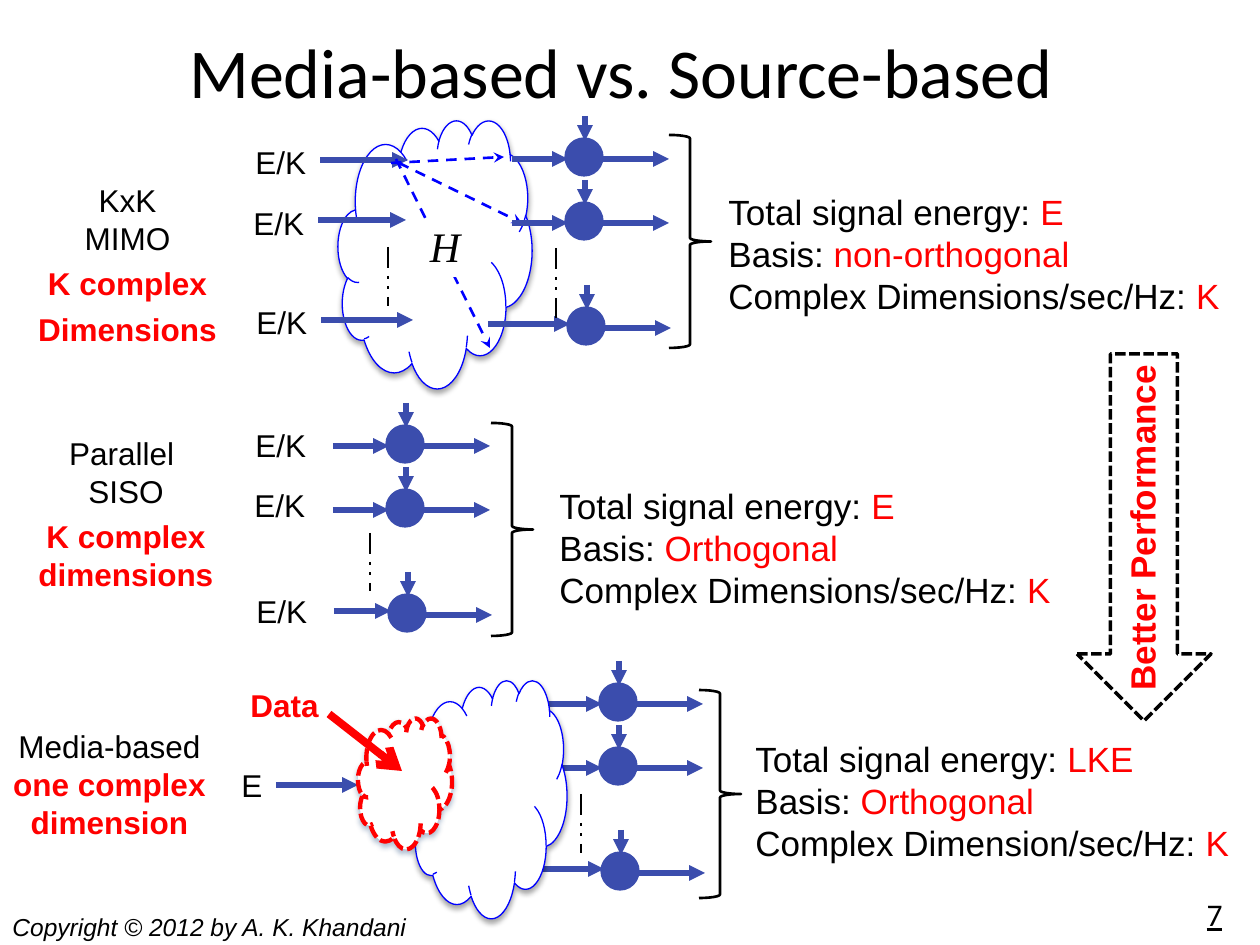
from lxml import etree
from pptx import Presentation
from pptx import util as u
from pptx.dml.color import RGBColor
from pptx.enum import dml, shapes, text
from pptx.oxml.ns import qn

SCALE = 914400 / 126  # EMU per px
COLORS = {"black": "000000", "white": "FFFFFF", "red": "FF0000",
          "blue": "0000FF", "indigo": "3B4DAD", "navy": "1F497D"}
CENTER, RIGHT = text.PP_ALIGN.CENTER, text.PP_ALIGN.RIGHT
MIDDLE = text.MSO_ANCHOR.MIDDLE
DASH = dml.MSO_LINE.DASH
SYS_DASH = dml.MSO_LINE.SQUARE_DOT
DASH_DOT_DOT = dml.MSO_LINE.DASH_DOT_DOT
SHAPE = shapes.MSO_SHAPE

# Scheme labels: box, wrap, lines of (text, is a highlight, line spacing)
schemes = [
    ((25, 175, 205, 219), False, [("KxK", False, 1), ("MIMO", False, 1),
                                  ("K complex", True, 1.2), ("Dimensions", True, 1.2)]),
    ((25, 428, 202, 173), False, [("Parallel ", False, 1), ("SISO", False, 1),
                                  ("K complex", True, 1.2), ("dimensions", True, 1)]),
    ((-74, 721, 367, 165), True, [("Media-based", False, 1), ("one complex", True, 1),
                                  ("dimension", True, 1)]),
]
# Properties: left, top, lines of (label, value)
properties = [
    (716, 184, [("Total signal energy: ", "E"), ("Basis: ", "non-orthogonal"),
                ("Complex Dimensions/sec/Hz: ", "K")]),
    (547, 478, [("Total signal energy: ", "E"), ("Basis: ", "Orthogonal"),
                ("Complex Dimensions/sec/Hz: ", "K")]),
    (743, 731, [("Total signal energy: ", "LKE"), ("Basis: ", "Orthogonal"),
                ("Complex Dimension/sec/Hz: ", "K")]),
]
braces = [(669, 135, 42, 213), (491, 423, 42, 213), (699, 690, 42, 208)]
# Receiver columns: left, top, input length of the last receiver
mimo_receivers, siso_receivers, media_receivers = (567, 140, 82), (388, 427, 57), (601, 685, 92)
receiver_steps = [(0, 0), (0, 64), (2, 169)]
energy_inputs = [(243, 137), (241, 198), (244, 297), (243, 420), (242, 480), (244, 586)]
mimo_inputs = [(316, 160), (314, 220), (321, 320)]
channel_paths = [(391, 163, 504, 157), (399, 163, 522, 223), (396, 159, 490, 348)]
ellipses = [(388, 247, 306), (556, 248, 318), (370, 533, 591), (581, 794, 853)]

prs = Presentation()
prs.slide_width, prs.slide_height = u.Inches(10), u.Inches(7.5)
slide = prs.slides.add_slide(prs.slide_layouts[6])


def px(*lengths):
    return [round(length * SCALE) for length in lengths]


def rgb(name):
    return RGBColor.from_string(COLORS[name])


def set_line(line, color, width, dash=None):
    line.color.rgb = rgb(color)
    line.width = u.Pt(width)
    if dash:
        line.dash_style = dash


def add_text(box, lines, size, font="Arial", align=None, anchor=None, wrap=False,
             italic=False, underline=False, fill=None, insets=None):
    """Each line is a list of (text, color, bold)."""
    label = slide.shapes.add_textbox(*px(*box))
    frame = label.text_frame
    frame.word_wrap = wrap
    if anchor is not None:
        frame.vertical_anchor = anchor
    if insets:
        (frame.margin_left, frame.margin_top,
         frame.margin_right, frame.margin_bottom) = px(*insets)
    if fill:
        label.fill.solid()
        label.fill.fore_color.rgb = rgb(fill)
    for i, parts in enumerate(lines):
        paragraph = frame.add_paragraph() if i else frame.paragraphs[0]
        paragraph.alignment = align
        for words, color, bold in parts:
            run = paragraph.add_run()
            run.text = words
            run.font.name, run.font.size = font, u.Pt(size)
            run.font.color.rgb = rgb(color)
            run.font.bold, run.font.italic = bold, italic
            run.font.underline = underline
    return label


def add_outline(kind, box, color, width, fill=None, dash=None, shadow=None):
    outline = slide.shapes.add_shape(kind, *px(*box))
    outline.shadow.inherit = False
    if fill:
        outline.fill.solid()
        outline.fill.fore_color.rgb = rgb(fill)
    else:
        outline.fill.background()
    set_line(outline.line, color, width, dash)
    if shadow:
        effects = outline._element.spPr.find(qn("a:effectLst"))
        outer = etree.SubElement(effects, qn("a:outerShdw"), blurRad="39370",
                                 dist="22860", dir="5400000", rotWithShape="0")
        tint = etree.SubElement(outer, qn("a:srgbClr"), val=COLORS[shadow])
        etree.SubElement(tint, qn("a:alpha"), val="35000")


def add_line(ends, color="indigo", width=3, head="triangle", dash=None):
    line = slide.shapes.add_connector(shapes.MSO_CONNECTOR.STRAIGHT, *px(*ends))
    set_line(line.line, color, width, dash)
    properties_xml = line._element.spPr
    if head:
        etree.SubElement(properties_xml.find(qn("a:ln")), qn("a:tailEnd"), type=head)
    etree.SubElement(properties_xml, qn("a:effectLst"))
    return line


def add_receivers(left, top, last_input):
    for i, (dx, dy) in enumerate(receiver_steps):
        x, y = left + dx, top + dy
        last = i == len(receiver_steps) - 1
        length, input_y = (last_input, y + 15) if last else (56, y + 19)
        add_outline(SHAPE.OVAL, (x, y, 34, 34), "indigo", 3, fill="indigo")
        add_line((x + 1 - length, input_y, x + 1, input_y))
        add_line((x + 34, y + 19, x + 102, y + 19))
        add_line((x + 18, y - 24, x + 18, y + 1))


# Title, footer and slide number
add_text((54, -9, 1134, 158), [[("Media-based vs. Source-based", "black", False)]], 40,
         font="Calibri", align=CENTER, anchor=MIDDLE, wrap=True)
add_text((0, 906, 421, 43), [[("Copyright © 2012 by A. K. Khandani", "black", False)]], 14,
         italic=True)
add_text((1176, 890, 59, 48), [[("7", "black", False)]], 18, font="Calibri",
         align=RIGHT, anchor=MIDDLE, wrap=True, underline=True)

# Scheme labels, properties and braces
for box, wrap, lines in schemes:
    label = add_text(box, [[(words, "red" if strong else "black", strong)]
                           for words, strong, _ in lines], 18, align=CENTER, wrap=wrap)
    for paragraph, (_, _, spacing) in zip(label.text_frame.paragraphs, lines):
        paragraph.line_spacing = spacing
for left, top, lines in properties:
    add_text((left, top, 576, 140), [[(name, "black", False), (value, "red", False)]
                                     for name, value in lines], 20, wrap=True)
for box in braces:
    add_outline(SHAPE.RIGHT_BRACE, box, "black", 1.5)

# Performance arrow
add_outline(SHAPE.DOWN_ARROW, (1077, 354, 134, 367), "black", 2, dash=SYS_DASH)
performance = add_text((888, 409, 508, 55), [[("Better Performance", "red", True)]], 20,
                       wrap=True, insets=(0, 6, 0, 6))
performance.rotation = 270

# MIMO channel
add_outline(SHAPE.CLOUD, (338, 120, 194, 268), "blue", 0.75, fill="white", shadow="black")
for x, y in mimo_inputs:
    add_line((x, y, x + 92, y))
for left, top in energy_inputs:
    add_text((left, top, 77, 50), [[("E/K", "black", False)]], 18, fill="white")
for ends in channel_paths:
    add_line(ends, "blue", 1.5, "stealth", DASH)
add_text((417, 220, 57, 57), [[("H", "black", False)]], 24, font="Times New Roman",
         italic=True, fill="white", insets=(13, 0, 0, 6))

# Receivers and the dotted lines between them
for column in (mimo_receivers, siso_receivers, media_receivers):
    add_receivers(*column)
for x, top, bottom in ellipses:
    add_line((x, top, x, bottom), "black", 1.5, None, DASH_DOT_DOT)

# Media-based channel
energy = add_text((229, 760, 47, 50), [[("E", "black", False)]], 18, fill="white")
add_line((276, 785, 358, 785)).begin_connect(energy, 3)
add_text((238, 680, 95, 50), [[("Data", "red", True)]], 18, wrap=True)
add_outline(SHAPE.CLOUD, (412, 680, 155, 238), "blue", 0.75, fill="white", shadow="black")
add_outline(SHAPE.CLOUD, (358, 718, 94, 131), "red", 2.5, fill="white", dash=SYS_DASH,
            shadow="navy")
add_line((329, 714, 402, 771), "red", 4.5, "arrow")

prs.save("out.pptx")
